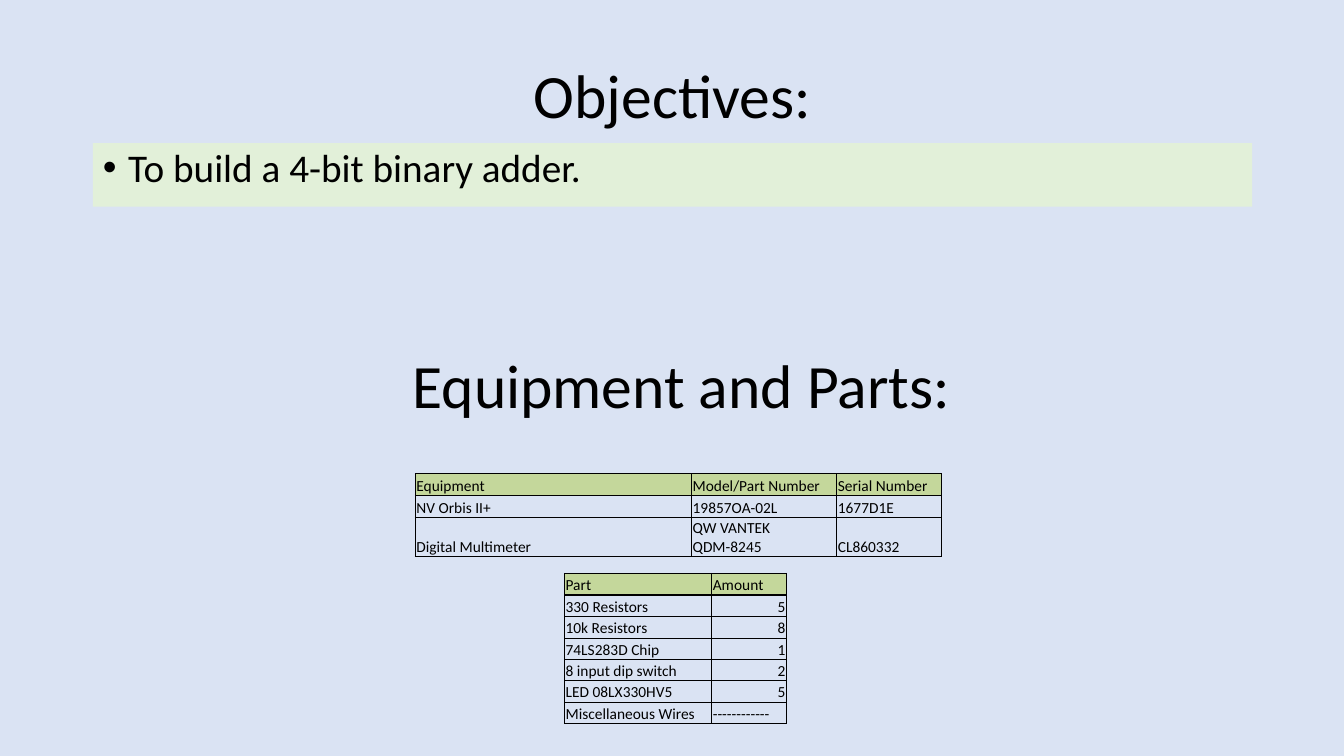
from dataclasses import dataclass

from lxml import etree
from pptx import Presentation
from pptx.dml.color import RGBColor
from pptx.enum.text import MSO_ANCHOR, MSO_AUTO_SIZE, PP_ALIGN
from pptx.oxml.ns import qn
from pptx.util import Inches, Pt

LEFT, CENTER, RIGHT = PP_ALIGN.LEFT, PP_ALIGN.CENTER, PP_ALIGN.RIGHT
TOP, MIDDLE, BOTTOM = MSO_ANCHOR.TOP, MSO_ANCHOR.MIDDLE, MSO_ANCHOR.BOTTOM
NO_AUTOFIT = MSO_AUTO_SIZE.NONE


@dataclass(frozen=True)
class Theme:
    font: str = "Calibri"
    ink: str = "000000"
    background: str = "DAE3F3"
    objective_fill: str = "E2F0D9"
    header_fill: str = "C4D79B"
    heading_size: float = 44
    body_size: float = 28
    table_size: float = 11
    outer_line: float = 1
    inner_line: float = 0.5


theme = Theme()


def write(frame, text, size, align=LEFT, anchor=TOP, spacing=None, before=0):
    frame.word_wrap = True
    frame.vertical_anchor = anchor
    paragraph = frame.paragraphs[0]
    paragraph.alignment = align
    paragraph.line_spacing = spacing
    paragraph.space_before = Pt(before)
    run = paragraph.add_run()
    run.text = text
    run.font.name = theme.font
    run.font.size = Pt(size)
    run.font.bold = False
    run.font.color.rgb = RGBColor.from_string(theme.ink)
    return paragraph


def draw_border(cell, side, width):
    properties = cell._tc.get_or_add_tcPr()
    line = etree.SubElement(properties, qn(f"a:ln{side}"), w=str(Pt(width)))
    fill = etree.SubElement(line, qn("a:solidFill"))
    etree.SubElement(fill, qn("a:srgbClr"), val=theme.ink)


# Slide and background
prs = Presentation()
prs.slide_width, prs.slide_height = Inches(13.33), Inches(7.5)
slide = prs.slides.add_slide(prs.slide_layouts[1])
slide.background.fill.solid()
slide.background.fill.fore_color.rgb = RGBColor.from_string(theme.background)

# Headings
objectives = slide.shapes.title
objectives.left, objectives.top = Inches(0.92), Inches(0.25)
objectives.width, objectives.height = Inches(11.5), Inches(1.45)
equipment_heading = slide.shapes.add_textbox(
    Inches(1.01), Inches(3.13), Inches(11.5), Inches(1.45))
for heading, text in ((objectives, "Objectives:"),
                      (equipment_heading, "Equipment and Parts:")):
    heading.text_frame.auto_size = NO_AUTOFIT
    write(heading.text_frame, text, theme.heading_size,
          align=CENTER, anchor=MIDDLE, spacing=0.9)

# Objective bullet
objective = slide.placeholders[1]
objective.left, objective.top = Inches(0.92), Inches(1.42)
objective.width, objective.height = Inches(11.5), Inches(0.63)
objective.fill.solid()
objective.fill.fore_color.rgb = RGBColor.from_string(theme.objective_fill)
objective.text_frame.auto_size = NO_AUTOFIT
goal = write(objective.text_frame, "To build a 4-bit binary adder.",
             theme.body_size, spacing=0.9, before=10)
bullet = goal._p.get_or_add_pPr()
bullet.set("marL", str(Inches(0.25)))
bullet.set("indent", str(Inches(-0.25)))
etree.SubElement(bullet, qn("a:buFont"), typeface="Arial")
etree.SubElement(bullet, qn("a:buChar"), char="•")

# Tables: left, top, height, column widths, rows
equipment = (4.12, 4.7, 0.65, (2.74, 1.44, 1.04), (
    ("Equipment", "Model/Part Number", "Serial Number"),
    ("NV Orbis II+", "19857OA-02L", "1677D1E"),
    ("Digital Multimeter", "QW VANTEK QDM-8245", "CL860332"),
))
parts = (5.6, 5.69, 1.49, (1.46, 0.74), (
    ("Part", "Amount"),
    ("330 Resistors", "5"),
    ("10k Resistors", "8"),
    ("74LS283D Chip", "1"),
    ("8 input dip switch", "2"),
    ("LED 08LX330HV5", "5"),
    ("Miscellaneous Wires", "------------"),
))

for left, top, height, widths, rows in (equipment, parts):
    last_row, last_column = len(rows) - 1, len(widths) - 1
    table = slide.shapes.add_table(
        len(rows), len(widths), Inches(left), Inches(top),
        Inches(sum(widths)), Inches(height)).table
    table.horz_banding = False
    for column, width in zip(table.columns, widths):
        column.width = Inches(width)
    for r, values in enumerate(rows):
        for c, value in enumerate(values):
            cell = table.cell(r, c)
            cell.margin_left = cell.margin_right = cell.margin_top = Inches(0.01)
            cell.margin_bottom = 0
            write(cell.text_frame, value, theme.table_size,
                  align=RIGHT if value.isdigit() else LEFT)
            cell.vertical_anchor = BOTTOM

            # Heavy lines frame the table and every header cell
            heavy_sides = (("L", r == 0 or c == 0),
                           ("R", r == 0 or c == last_column),
                           ("T", r <= 1),
                           ("B", r in (0, last_row)))
            for side, heavy in heavy_sides:
                draw_border(cell, side,
                            theme.outer_line if heavy else theme.inner_line)
            if r == 0:
                cell.fill.solid()
                cell.fill.fore_color.rgb = RGBColor.from_string(theme.header_fill)
            else:
                cell.fill.background()

prs.save("out.pptx")
